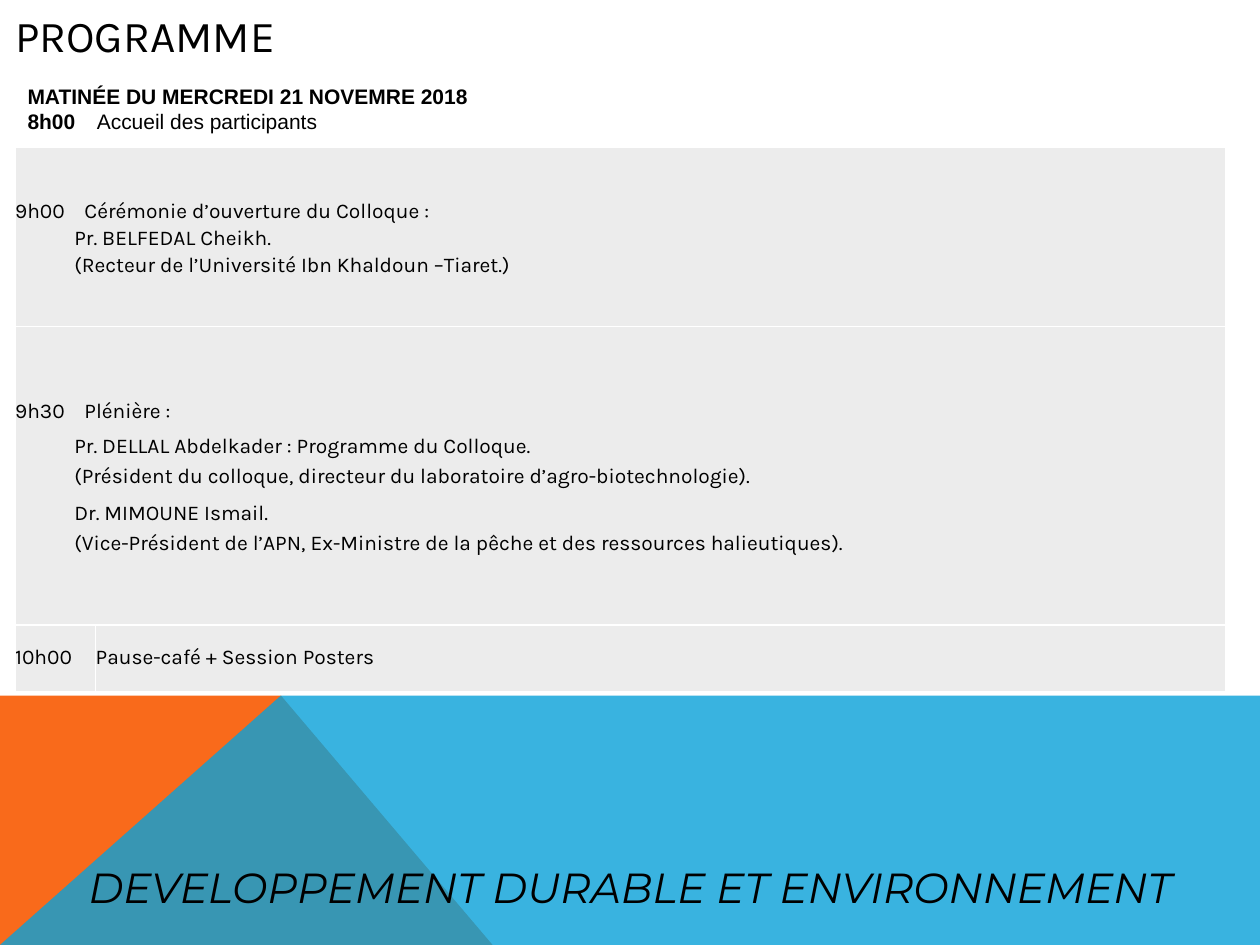
from dataclasses import dataclass

from lxml.etree import SubElement
from pptx import Presentation
from pptx.dml.color import RGBColor
from pptx.enum.text import MSO_ANCHOR, MSO_AUTO_SIZE, PP_ALIGN
from pptx.oxml.ns import qn
from pptx.util import Inches, Pt


@dataclass(frozen=True)
class Theme:
    ink: str = "000000"
    cell: str = "ECECEC"
    border: str = "FFFFFF"
    orange: str = "F96A1B"
    blue: str = "08A1D9"
    body_font: str = "Karla"
    heading_font: str = "Arial"
    banner_font: str = "Montserrat"
    title_size: float = 25.2
    body_size: float = 12
    banner_size: float = 24


THEME = Theme()
HOUR_INDENT = 0.55
DETAIL_INDENT = 0.47
EXACT = Pt(13.5)

# Each line: text, hanging hour or not, line spacing, space before, space after
OPENING = [
    ("9h00\tCérémonie d’ouverture du Colloque\u00a0:", True, 1.15, 1, 1),
    ("Pr. BELFEDAL Cheikh.", False, EXACT, 1, 1),
    ("(Recteur de l’Université Ibn Khaldoun –Tiaret.)", False, EXACT, 1, 1),
]
PLENARY = [
    ("9h30\tPlénière\u00a0:", True, 1.15, 1, 3),
    ("Pr. DELLAL Abdelkader\u00a0: Programme du Colloque.", False, 1.15, 1, 0),
    ("(Président du colloque, directeur du laboratoire d’agro-biotechnologie).", False, 1.15, 1, 4),
    ("Dr. MIMOUNE Ismail.", False, 1.15, 1, 0),
    ("(Vice-Président de l’APN, Ex-Ministre de la pêche et des ressources halieutiques).",
     False, 1.15, 1, 3),
]
BREAK_HOUR = [("10h00", True, EXACT, 0, 0)]
BREAK_NAME = [("Pause-café + Session Posters", True, EXACT, 1, 1)]


def add_span(para, text, *, font=THEME.body_font, size=THEME.body_size,
             bold=False, italic=False):
    span = para.add_run()
    span.text = text
    span.font.name = font
    span.font.size = Pt(size)
    span.font.bold = bold
    span.font.italic = italic
    span.font.color.rgb = RGBColor.from_string(THEME.ink)


def set_indent(para, left, first=0):
    properties = para._p.get_or_add_pPr()
    properties.set("marL", str(Inches(left)))
    properties.set("indent", str(Inches(first)))


def next_para(frame, index):
    return frame.paragraphs[0] if index == 0 else frame.add_paragraph()


def add_text_box(page, left, top, width, height, anchor):
    frame = page.shapes.add_textbox(
        Inches(left), Inches(top), Inches(width), Inches(height)).text_frame
    frame.word_wrap = True
    frame.vertical_anchor = anchor
    return frame


def add_polygon(page, points, color, alpha=None):
    start, *rest = [(Inches(x), Inches(y)) for x, y in points]
    builder = page.shapes.build_freeform(*start)
    builder.add_line_segments(rest, close=True)
    shape = builder.convert_to_shape()
    shape.shadow.inherit = False
    shape.line.fill.background()
    shape.fill.solid()
    shape.fill.fore_color.rgb = RGBColor.from_string(color)
    if alpha is not None:
        tint = shape._element.spPr.find(qn("a:solidFill"))[0]
        SubElement(tint, qn("a:alpha"), val=str(alpha * 1000))


def add_banner(page, left, top, width, height):
    """Coloured triangles with the theme of the conference."""
    right, bottom = left + width, top + height
    peak = (left + 2.23, top)
    add_polygon(page, [(left, bottom), (left, top), peak, (left + 3.91, bottom)], THEME.orange)
    add_polygon(page, [(left, bottom), peak, (right, top), (right, bottom)], THEME.blue, 80)
    frame = add_text_box(page, left, top + 1.27, width, 0.5, MSO_ANCHOR.TOP)
    para = frame.paragraphs[0]
    para.alignment = PP_ALIGN.CENTER
    add_span(para, "DEVELOPPEMENT DURABLE ET ENVIRONNEMENT",
             font=THEME.banner_font, size=THEME.banner_size, italic=True)


def add_title(page, left, top, width, height):
    title = page.shapes.title
    title.left, title.top = Inches(left), Inches(top)
    title.width, title.height = Inches(width), Inches(height)
    frame = title.text_frame
    frame.auto_size = MSO_AUTO_SIZE.NONE
    frame.vertical_anchor = MSO_ANCHOR.MIDDLE
    frame.paragraphs[0].alignment = PP_ALIGN.LEFT
    add_span(frame.paragraphs[0], "PROGRAMME", size=THEME.title_size)


def add_heading(page, left, top, width, height):
    """Date of the session and its first entry."""
    frame = add_text_box(page, left, top, width, height, MSO_ANCHOR.MIDDLE)
    lines = [[("MATINÉE DU MERCREDI 21 NOVEMRE 2018", True)],
             [("8h00", True), ("\tAccueil des participants", False)]]
    for index, spans in enumerate(lines):
        para = next_para(frame, index)
        set_indent(para, HOUR_INDENT, -HOUR_INDENT)
        for text, bold in spans:
            add_span(para, text, font=THEME.heading_font, bold=bold)


def style_cell(cell):
    cell.fill.solid()
    cell.fill.fore_color.rgb = RGBColor.from_string(THEME.cell)
    cell.vertical_anchor = MSO_ANCHOR.MIDDLE
    cell.margin_left = cell.margin_right = cell.margin_top = cell.margin_bottom = 0
    properties = cell._tc.get_or_add_tcPr()
    for index, side in enumerate(("lnL", "lnR", "lnT", "lnB")):
        line = properties.makeelement(qn(f"a:{side}"), {"w": str(Pt(1))})
        fill = SubElement(line, qn("a:solidFill"))
        SubElement(fill, qn("a:srgbClr"), val=THEME.border)
        properties.insert(index, line)


def fill_cell(cell, lines):
    for index, (text, hanging, spacing, before, after) in enumerate(lines):
        para = next_para(cell.text_frame, index)
        if not hanging:
            set_indent(para, DETAIL_INDENT)
        elif "\t" in text:
            set_indent(para, HOUR_INDENT, -HOUR_INDENT)
        para.line_spacing = spacing
        para.space_before, para.space_after = Pt(before), Pt(after)
        add_span(para, text)


def add_schedule(page, left, top, width, height):
    """Morning timetable; the two long entries span both columns."""
    table = page.shapes.add_table(
        3, 2, Inches(left), Inches(top), Inches(width), Inches(height)).table
    table.first_row = table.horz_banding = False
    hour_width = 0.64
    for column, size in zip(table.columns, (hour_width, width - hour_width)):
        column.width = Inches(size)
    for row, size in zip(table.rows, (1.42, 2.37, 0.53)):
        row.height = Inches(size)
    for cell in table.iter_cells():
        style_cell(cell)
    for row in range(2):
        table.cell(row, 0).merge(table.cell(row, 1))
    entries = {(0, 0): OPENING, (1, 0): PLENARY, (2, 0): BREAK_HOUR, (2, 1): BREAK_NAME}
    for (row, column), lines in entries.items():
        fill_cell(table.cell(row, column), lines)


def main():
    deck = Presentation()
    deck.slide_width, deck.slide_height = Inches(10), Inches(7.5)
    page = deck.slides.add_slide(deck.slide_layouts[5])
    add_title(page, 0.02, 0, 7.98, 0.56)
    add_schedule(page, 0.12, 1.17, 9.61, 4.32)
    add_heading(page, 0.12, 0.61, 9.61, 0.5)
    add_banner(page, 0, 5.52, 10, 1.98)
    deck.save("out.pptx")


if __name__ == "__main__":
    main()
